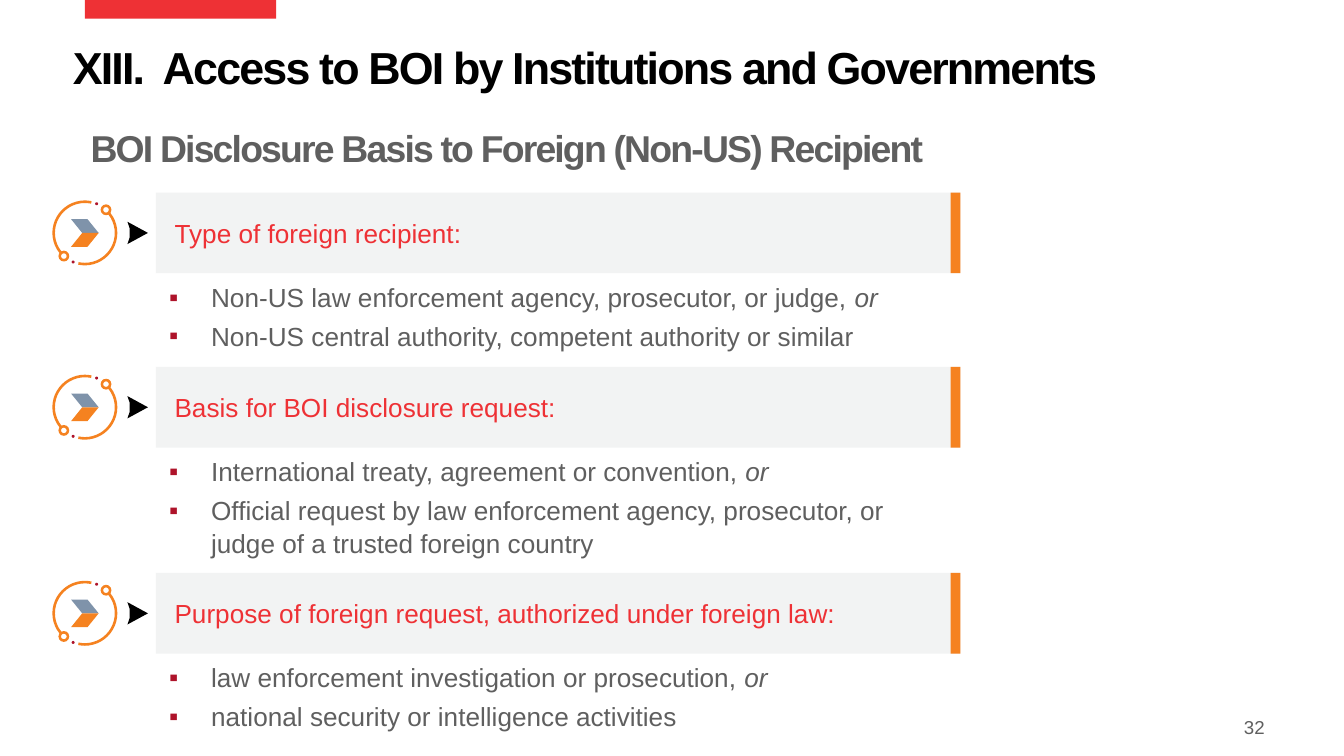
"""Builds the slide on access to BOI by foreign recipients."""
from lxml.etree import SubElement
from pptx import Presentation
from pptx.dml.color import RGBColor
from pptx.enum.shapes import MSO_SHAPE as Shape
from pptx.enum.text import MSO_ANCHOR as Anchor, PP_ALIGN as Align
from pptx.oxml.ns import qn
from pptx.util import Pt

RED, ORANGE, CRIMSON, GRAY = "EE3135", "F58220", "AE132A", "5F5F5F"
color = RGBColor.from_string


def add_block(shapes, kind, left, top, width, height, fill):
    shape = shapes.add_shape(kind, Pt(left), Pt(top), Pt(width), Pt(height))
    shape.shadow.inherit = False
    shape.fill.solid()
    shape.fill.fore_color.rgb = color(fill)
    shape.line.fill.background()
    return shape


def add_outline(shapes, x, y, offsets, fill):
    points = [(Pt(x + dx), Pt(y + dy)) for dx, dy in offsets]
    builder = shapes.build_freeform(*points[0])
    builder.add_line_segments(points[1:], close=True)
    shape = builder.convert_to_shape()
    shape.shadow.inherit = False
    shape.fill.solid()
    shape.fill.fore_color.rgb = color(fill)
    shape.line.fill.background()


presentation = Presentation()
presentation.slide_width, presentation.slide_height = Pt(720), Pt(405)
slide = presentation.slides.add_slide(presentation.slide_layouts[6])

add_block(slide.shapes, Shape.RECTANGLE, 45.5, 0, 102.5, 10, RED)

labels = [
    ("XIII.  Access to BOI by Institutions and Governments", 39, 24.5, 633, 36, 24, "000000"),
    ("BOI Disclosure Basis to Foreign (Non-US) Recipient", 48.5, 70, 633, 36, 20, GRAY),
    ("32", 613.5, 381.6, 64, 16, 10, GRAY),
]
for text, left, top, width, height, size, ink in labels:
    box = slide.shapes.add_textbox(Pt(left), Pt(top), Pt(width), Pt(height))
    frame = box.text_frame
    frame.word_wrap = True
    frame.margin_left = frame.margin_right = frame.margin_top = frame.margin_bottom = 0
    frame.text = text
    paragraph = frame.paragraphs[0]
    font = paragraph.runs[0].font
    font.name, font.size = "Arial", Pt(size)
    font.color.rgb = color(ink)
    if size > 10:
        font.bold = True
        paragraph.line_spacing = 0.9
        paragraph.runs[0]._r.get_or_add_rPr().set("spc", "-100")
    else:
        paragraph.alignment = Align.RIGHT
        frame.vertical_anchor = Anchor.MIDDLE

upper_chevron = [(-7.4, -7.4), (1.4, -7.4), (7.4, 0), (-1.4, 0)]
lower_chevron = [(dx, -dy) for dx, dy in upper_chevron]
arrowhead = [(22.8, -6), (33.8, 0), (22.8, 6), (24, 2.5), (24, -2.5)]

sections = [
    ("Type of foreign recipient:", 44, [
        ("Non-US law enforcement agency, prosecutor, or judge, ", "or"),
        ("Non-US central authority, competent authority or similar", "")]),
    ("Basis for BOI disclosure request:", 61, [
        ("International treaty, agreement or convention, ", "or"),
        ("Official request by law enforcement agency, prosecutor, or "
         "judge of a trusted foreign country", "")]),
    ("Purpose of foreign request, authorized under foreign law:", 44, [
        ("law enforcement investigation or prosecution, ", "or"),
        ("national security or intelligence activities", "")]),
]
BAR_LEFT, BAR_WIDTH, BAR_HEIGHT, GAP = 83.5, 431, 43.2, 6.2
top = 103.2
for title, body_height, items in sections:
    shapes = slide.shapes.add_group_shape().shapes
    x, y = 45.5, top + BAR_HEIGHT / 2
    add_block(shapes, Shape.OVAL, x - 21.6, top, 43.2, 43.2, "FFFFFF")
    for side, start, end in [(-1, 140, 282), (1, 320, 102)]:
        arc = shapes.add_shape(Shape.ARC, Pt(x - 16.7), Pt(y - 16.7), Pt(33.4), Pt(33.4))
        arc.shadow.inherit = False
        arc.fill.background()
        arc.line.color.rgb = color(ORANGE)
        arc.line.width = Pt(1.4)
        arc.adjustments[0], arc.adjustments[1] = start * 0.6, end * 0.6
        ring = add_block(shapes, Shape.DONUT, x + side * 11.3 - 2.9, y - side * 12.4 - 2.9, 5.8, 5.8, ORANGE)
        ring.adjustments[0] = 0.24
        add_block(shapes, Shape.OVAL, x + side * 6.3 - 0.8, y - side * 15.6 - 0.8, 1.6, 1.6, CRIMSON)
    add_outline(shapes, x, y, upper_chevron, "7F93AA")
    add_outline(shapes, x, y, lower_chevron, ORANGE)

    bar = add_block(shapes, Shape.RECTANGLE, BAR_LEFT, top, BAR_WIDTH, BAR_HEIGHT, "F2F3F3")
    frame = bar.text_frame
    frame.word_wrap = True
    frame.vertical_anchor = Anchor.MIDDLE
    frame.margin_left = frame.margin_top = frame.margin_bottom = Pt(2)
    frame.margin_right = 0
    frame.text = title
    paragraph = frame.paragraphs[0]
    paragraph.alignment = Align.LEFT
    paragraph._p.get_or_add_pPr().set("marL", str(Pt(8)))
    font = paragraph.runs[0].font
    font.name, font.size = "Arial", Pt(14)
    font.color.rgb = color(RED)
    add_block(shapes, Shape.RECTANGLE, 509.3, top, 5.2, BAR_HEIGHT, ORANGE)
    add_outline(shapes, x, y, arrowhead, "000000")

    top += BAR_HEIGHT
    body = shapes.add_textbox(Pt(BAR_LEFT), Pt(top), Pt(BAR_WIDTH), Pt(body_height))
    frame = body.text_frame
    frame.word_wrap = True
    for index, (text, ending) in enumerate(items):
        paragraph = frame.add_paragraph() if index else frame.paragraphs[0]
        paragraph.text = text
        if ending:
            paragraph.add_run().text = ending
            paragraph.runs[1].font.italic = True
        paragraph.space_after = Pt(3)
        paragraph.line_spacing = 1.05
        properties = paragraph._p.get_or_add_pPr()
        properties.set("marL", str(Pt(22.5)))
        properties.set("indent", str(Pt(-22.5)))
        bullet_color = SubElement(properties, qn("a:buClr"))
        SubElement(bullet_color, qn("a:srgbClr"), val=CRIMSON)
        SubElement(properties, qn("a:buFont"), typeface="Arial")
        SubElement(properties, qn("a:buChar"), char="▪")
        for run in paragraph.runs:
            run.font.name, run.font.size = "Arial", Pt(14)
            run.font.color.rgb = color(GRAY)
    top += body_height + GAP

presentation.save("out.pptx")
